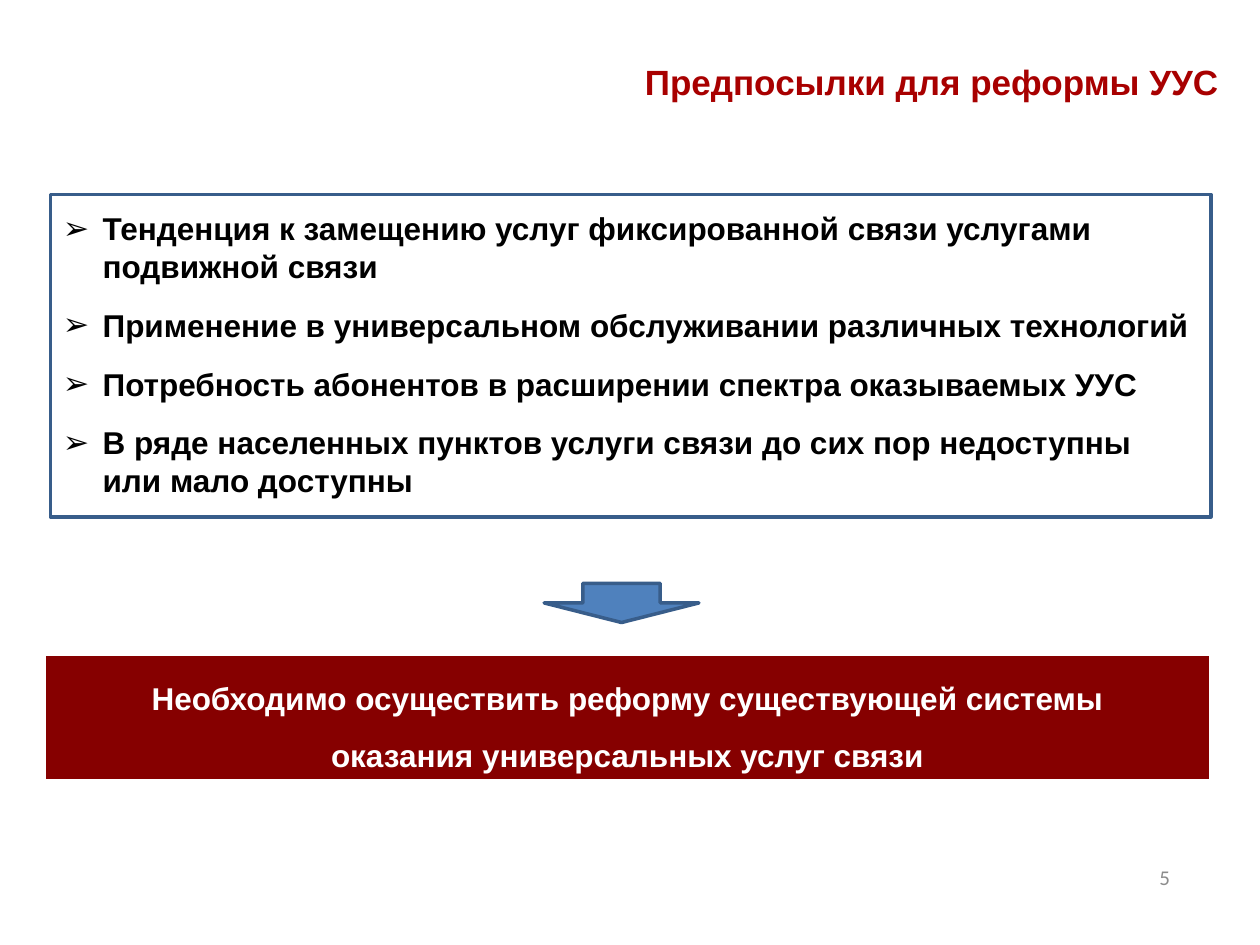
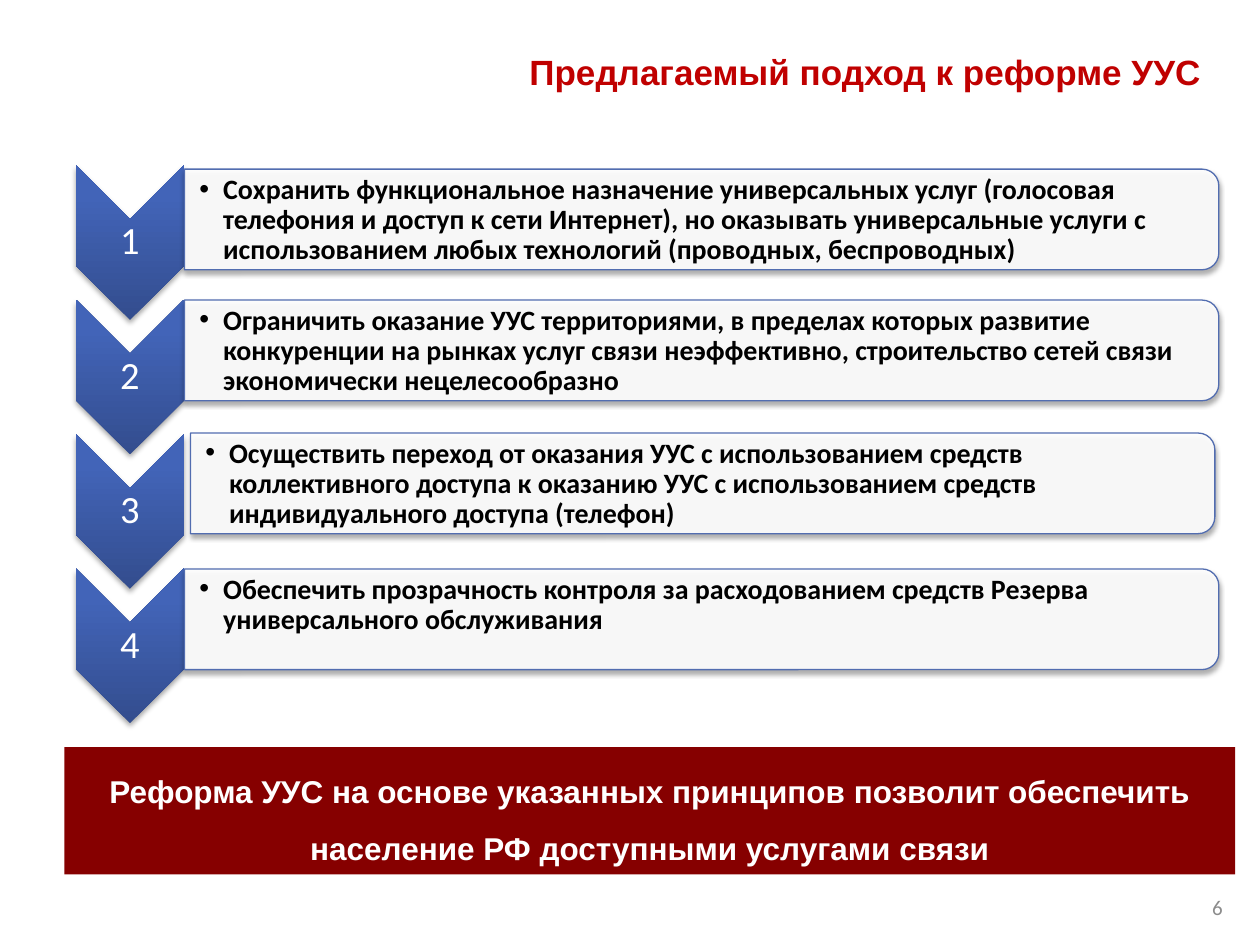
from lxml.etree import SubElement
from pptx import Presentation
from pptx.dml.color import RGBColor
from pptx.enum.shapes import MSO_SHAPE as Form
from pptx.enum.text import MSO_ANCHOR as Anchor, MSO_AUTO_SIZE as Fit, PP_ALIGN as Align
from pptx.oxml.ns import qn
from pptx.util import Cm, Pt

RED = RGBColor(0xA8, 0x00, 0x00)
SCARLET = RGBColor(0xC0, 0x00, 0x00)
MAROON = RGBColor(0x86, 0x00, 0x00)
WHITE = RGBColor(0xFF, 0xFF, 0xFF)
BLACK = RGBColor(0x00, 0x00, 0x00)
GREY = RGBColor(0x8C, 0x8C, 0x8C)
NAVY = RGBColor(0x38, 0x5D, 0x8A)
BLUE = RGBColor(0x4F, 0x81, 0xBD)
EDGE = RGBColor(0x52, 0x6D, 0xB0)
DEEP = RGBColor(0x33, 0x4D, 0x8E)
LIGHT = RGBColor(0x42, 0x64, 0xB8)

HEAD = {"name": "Arial", "size": Pt(20), "bold": True}
BODY = {"name": "Arial", "size": Pt(18), "bold": True}
STEP = {"name": "Calibri", "size": Pt(16), "bold": True}
DIGIT = {"name": "Calibri", "size": Pt(22), "bold": False}
FOOT = {"name": "Calibri", "size": Pt(12), "bold": False}

CAUSES = [
    "Тенденция к замещению услуг фиксированной связи услугами подвижной связи",
    "Применение в универсальном обслуживании различных технологий",
    "Потребность абонентов в расширении спектра оказываемых УУС",
    "В ряде населенных пунктов услуги связи до сих пор недоступны или мало доступны",
]
# Left, top and width of each step's panel in cm, then its text
STEPS = [
    (3.72, 3.41, 20.85, "Сохранить функциональное назначение универсальных услуг "
     "(голосовая телефония и доступ к сети Интернет), но оказывать универсальные "
     "услуги с использованием любых технологий (проводных, беспроводных)"),
    (3.72, 6.05, 20.85, "Ограничить оказание УУС территориями, в пределах которых "
     "развитие конкуренции на рынках услуг связи неэффективно, строительство сетей "
     "связи экономически нецелесообразно"),
    (3.84, 8.73, 20.65, "Осуществить переход от оказания УУС с использованием средств "
     "коллективного доступа к оказанию УУС с использованием средств "
     "индивидуального доступа (телефон)"),
    (3.72, 11.47, 20.85, "Обеспечить прозрачность контроля за расходованием средств "
     "Резерва универсального обслуживания"),
]


def add_bullet(para, mark, indent):
    props = para._p.get_or_add_pPr()
    props.set("marL", str(Cm(indent)))
    props.set("indent", str(-Cm(indent)))
    SubElement(props, qn("a:buFont")).set("typeface", "Arial")
    SubElement(props, qn("a:buChar")).set("char", mark)


def write(shape, lines, style, color, align=Align.LEFT, anchor=Anchor.TOP,
          pad=(0.25, 0.13), space=None, gap=0, bullet=None):
    """Fill a shape with paragraphs; pad is (sides, top and bottom) in cm."""
    frame = shape.text_frame
    side, edge = (Cm(size) for size in pad)
    layout = {"word_wrap": True, "auto_size": Fit.NONE, "vertical_anchor": anchor,
              "margin_left": side, "margin_right": side,
              "margin_top": edge, "margin_bottom": edge}
    for key, value in layout.items():
        setattr(frame, key, value)
    for i, line in enumerate(lines):
        para = frame.add_paragraph() if i else frame.paragraphs[0]
        if bullet:
            add_bullet(para, *bullet)
        para.alignment = align
        para.line_spacing = space
        para.space_before = Pt(gap if i else 0)
        run = para.add_run()
        run.text = line
        for key, value in style.items():
            setattr(run.font, key, value)
        run.font.color.rgb = color


def add_form(slide, form, box, fill=None, line=None, weight=2):
    shape = slide.shapes.add_shape(form, *map(Cm, box))
    if fill is None:
        shape.fill.background()
    else:
        shape.fill.solid()
        shape.fill.fore_color.rgb = fill
    if line is None:
        shape.line.fill.background()
    else:
        shape.line.color.rgb = line
        shape.line.width = Pt(weight)
    shape.shadow.inherit = False
    return shape


def add_turned(slide, form, box, **look):
    """Add a shape turned by 90 degrees so that it covers box as seen."""
    left, top, width, height = box
    shift = (width - height) / 2
    shape = add_form(slide, form, (left + shift, top - shift, height, width), **look)
    shape.rotation = 90
    return shape


def cast_shadow(shape):
    effects = shape._element.spPr.find(qn("a:effectLst"))
    shade = SubElement(effects, qn("a:outerShdw"), blurRad=str(Pt(3.1)),
                       dist=str(Pt(1.8)), dir="5400000", rotWithShape="0")
    color = SubElement(shade, qn("a:srgbClr"), val="000000")
    SubElement(color, qn("a:alpha"), val="35000")


def add_text(slide, box, *args, **kwargs):
    write(slide.shapes.add_textbox(*map(Cm, box)), *args, **kwargs)


def add_slide(deck, title, color, box, number, corner):
    """Add a slide with its title and its number, whose box starts at corner."""
    slide = deck.slides.add_slide(deck.slide_layouts[5])
    head = slide.shapes.title
    for key, value in zip(("left", "top", "width", "height"), box):
        setattr(head, key, Cm(value))
    write(head, [title], HEAD, color, Align.RIGHT)
    add_text(slide, (*corner, 5.93, 1.01), [number], FOOT, GREY,
             Align.RIGHT, Anchor.MIDDLE)
    return slide


def add_band(slide, box, lines, line=None):
    band = add_form(slide, Form.RECTANGLE, box, MAROON, line)
    write(band, lines, BODY, WHITE, Align.CENTER, space=1.5)


def add_chevron(slide, top, digit):
    left, width, height = 1.53, 2.18, 3.12
    arrow = add_turned(slide, Form.CHEVRON, (left, top, width, height))
    arrow.fill.gradient()
    arrow.fill.gradient_angle = 90
    for stop, color, place in zip(arrow.fill.gradient_stops, (DEEP, LIGHT), (0, 0.8)):
        stop.color.rgb = color
        stop.position = place
    arrow._element.spPr.find(qn("a:gradFill")).set("rotWithShape", "0")
    cast_shadow(arrow)
    add_text(slide, (left, top + 1.09, width, 0.94), [digit], DIGIT, WHITE,
             Align.CENTER, Anchor.MIDDLE, (0.05, 0.05), 0.9)


def add_panel(slide, left, top, width, text):
    panel = add_turned(slide, Form.ROUND_2_SAME_RECTANGLE, (left, top, width, 2.03),
                       fill=WHITE, line=EDGE, weight=0.75)
    color = panel._element.spPr.find(qn("a:solidFill"))[0]
    SubElement(color, qn("a:alpha"), val="90000")
    cast_shadow(panel)
    add_text(slide, (left, top + 0.1, width - 0.1, 1.83), [text], STEP, BLACK,
             pad=(0.3, 0.02), space=0.9, bullet=("•", 0.48))


def add_causes(deck):
    slide = add_slide(deck, "Предпосылки для реформы УУС", RED,
                      (10.49, 1.09, 14.33, 1.12), "5", (17.91, 17.17))
    frame = add_form(slide, Form.RECTANGLE, (1.02, 3.92, 23.39, 6.5), line=NAVY)
    write(frame, CAUSES, BODY, BLACK, pad=(0.25, 0.3), gap=12, bullet=("➢", 0.8))
    add_band(slide, (0.89, 13.18, 23.52, 2.57),
             ["Необходимо осуществить реформу существующей системы",
              "оказания универсальных услуг связи"], WHITE)
    add_form(slide, Form.DOWN_ARROW, (10.97, 11.76, 3.12, 0.79), BLUE, NAVY)


def add_plan(deck):
    slide = add_slide(deck, "Предлагаемый подход к реформе УУС", SCARLET,
                      (9.86, 0.89, 14.6, 1.12), "6", (18.97, 17.78))
    for i, step in enumerate(STEPS):
        add_chevron(slide, 3.33 + 2.71 * i, str(i + 1))
        add_panel(slide, *step)
    add_band(slide, (1.3, 15.06, 23.6, 2.57),
             ["Реформа УУС на основе указанных принципов позволит обеспечить "
              "население РФ доступными услугами связи"])


def main():
    deck = Presentation()
    deck.slide_width, deck.slide_height = Cm(25.4), Cm(19.05)
    add_causes(deck)
    add_plan(deck)
    deck.save("out.pptx")


if __name__ == "__main__":
    main()
